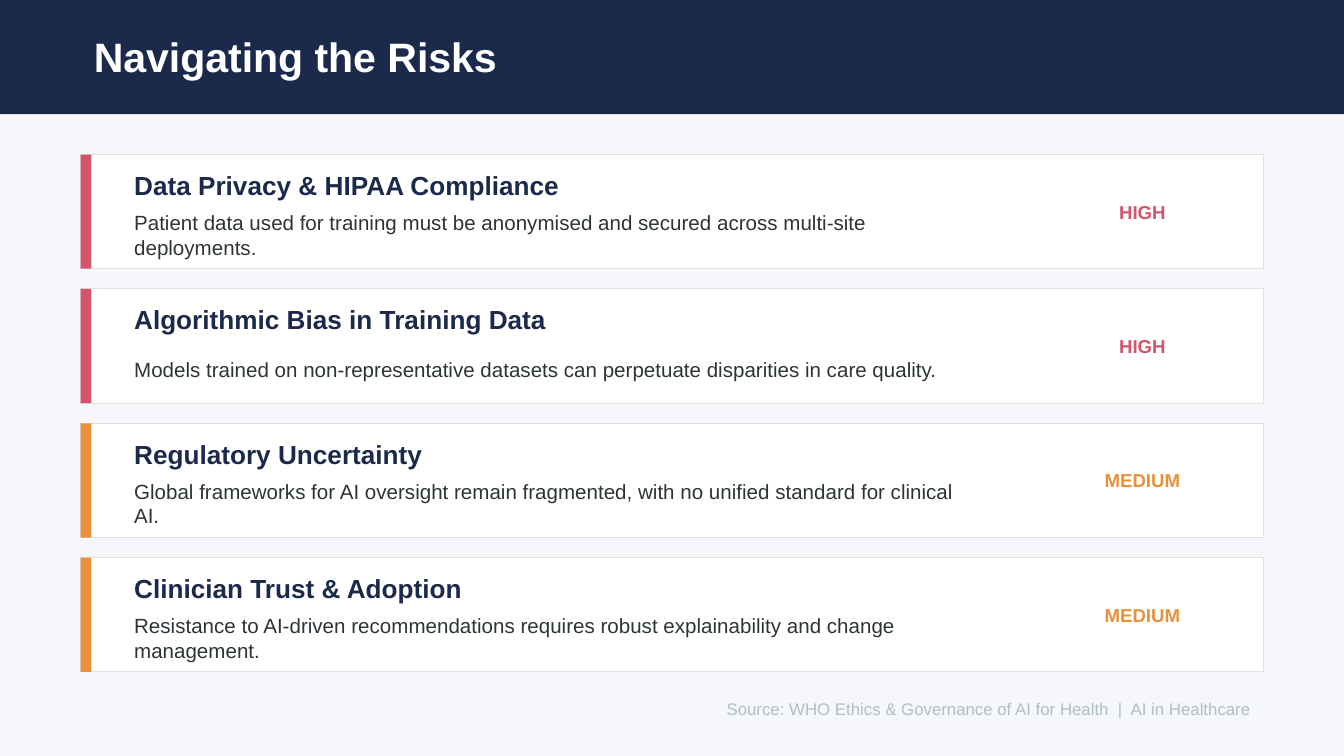
from pptx import Presentation as Deck
from pptx.dml.color import RGBColor as Color
from pptx.enum.shapes import MSO_SHAPE as Shape
from pptx.enum.text import MSO_ANCHOR as Anchor, PP_ALIGN as Align
from pptx.util import Inches, Pt

# Content
TITLE = "Navigating the Risks"
RISKS = [
    ("Data Privacy & HIPAA Compliance", "HIGH",
     "Patient data used for training must be anonymised and secured across multi-site deployments."),
    ("Algorithmic Bias in Training Data", "HIGH",
     "Models trained on non-representative datasets can perpetuate disparities in care quality."),
    ("Regulatory Uncertainty", "MEDIUM",
     "Global frameworks for AI oversight remain fragmented, with no unified standard for clinical AI."),
    ("Clinician Trust & Adoption", "MEDIUM",
     "Resistance to AI-driven recommendations requires robust explainability and change management."),
]
SOURCE = "Source: WHO Ethics & Governance of AI for Health  |  AI in Healthcare"

# Theme: colours and type styles
THEME = {
    "back": "F5F7FA", "navy": "1B2A4A", "card": "FFFFFF", "edge": "E0E0E0",
    "ink": "2D3436", "mute": "B0BEC5", "HIGH": "D4556B", "MEDIUM": "E8913A",
    "font": "Arial",
    "title": {"size": Pt(22), "bold": True},
    "head": {"size": Pt(14), "bold": True},
    "body": {"size": Pt(11), "bold": False},
    "level": {"size": Pt(10), "bold": True},
    "foot": {"size": Pt(9), "bold": False},
}

# Layout in inches, on a 16:9 slide
WIDE = 10
TALL = WIDE * 9 / 16
LEFT, SPAN = 0.6, 8.8
TOP, HIGH, STEP = 1.15, 0.85, 1


def tint(name):
    return Color.from_string(THEME[name])


def add_box(slide, x, y, w, h, fill, edge=None):
    box = slide.shapes.add_shape(Shape.RECTANGLE, *map(Inches, (x, y, w, h)))
    box.shadow.inherit = False
    box.fill.solid()
    box.fill.fore_color.rgb = tint(fill)
    if edge:
        box.line.color.rgb = tint(edge)
        box.line.width = Pt(0.5)
    else:
        box.line.fill.background()


def add_text(slide, x, y, w, h, text, style, color, align=Align.LEFT):
    frame = slide.shapes.add_textbox(*map(Inches, (x, y, w, h))).text_frame
    frame.word_wrap = True
    frame.vertical_anchor = Anchor.MIDDLE
    para = frame.paragraphs[0]
    para.alignment = align
    run = para.add_run()
    run.text = text
    for key, value in {"name": THEME["font"], **THEME[style]}.items():
        setattr(run.font, key, value)
    run.font.color.rgb = tint(color)


def add_risk(slide, y, head, level, body):
    add_box(slide, LEFT, y, SPAN, HIGH, "card", "edge")
    add_box(slide, LEFT, y, 0.08, HIGH, level)
    add_text(slide, 7.8, y + 0.15, 1.4, 0.55, level, "level", level, Align.CENTER)
    add_text(slide, 0.9, y + 0.05, 6.5, 0.35, head, "head", "navy")
    add_text(slide, 0.9, y + 0.42, 6.5, 0.35, body, "body", "ink")


def main():
    deck = Deck()
    deck.slide_width, deck.slide_height = Inches(WIDE), Inches(TALL)
    slide = deck.slides.add_slide(deck.slide_layouts[6])
    slide.background.fill.solid()
    slide.background.fill.fore_color.rgb = tint("back")

    # Title band
    add_box(slide, 0, 0, WIDE, 0.85, "navy")
    add_text(slide, LEFT, 0.12, SPAN, 0.6, TITLE, "title", "card")

    # Risk cards
    for row, risk in enumerate(RISKS):
        add_risk(slide, TOP + row * STEP, *risk)

    # Source line
    add_text(slide, LEFT, 5.15, SPAN, 0.25, SOURCE, "foot", "mute", Align.RIGHT)
    deck.save("out.pptx")


if __name__ == "__main__":
    main()
